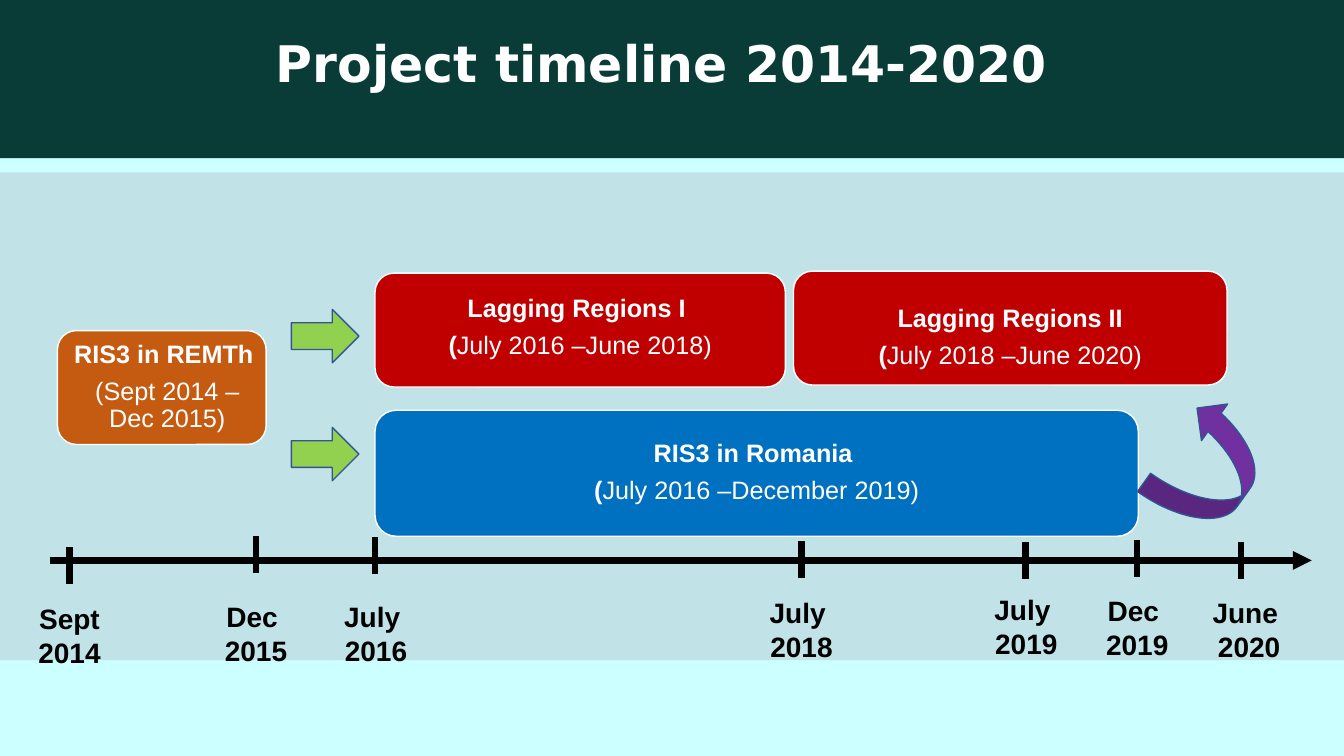
from dataclasses import dataclass

from lxml.etree import SubElement
from pptx import Presentation
from pptx.dml.color import RGBColor
from pptx.enum.shapes import MSO_CONNECTOR, MSO_SHAPE as Shape
from pptx.enum.text import MSO_ANCHOR as Anchor, MSO_AUTO_SIZE, PP_ALIGN as Align
from pptx.oxml.ns import qn
from pptx.util import Inches, Pt

WHITE, BLACK, OUTLINE = "FFFFFF", "000000", "325491"
SLIDE_W, SLIDE_H = 13.33, 7.5
AXIS_Y = 5.56
TICK_H = 0.36
LABEL_W, LABEL_H = 1.36, 0.77


@dataclass
class Project:
    name: str
    opening: str
    dates: str
    box: tuple[float, float, float, float]
    fill: str
    insets: tuple[float, float, float, float] = (0.07, 0.07, 0.07, 0.07)


@dataclass
class Milestone:
    month: str
    year: str
    x: float
    tick_top: float
    label_top: float
    label_shift: float = 0


PROJECTS = [
    Project("RIS3 in REMTh ", "", "(Sept 2014 –Dec 2015)",
            (0.57, 3.28, 2.07, 1.13), "C55A11", (0.11, 0.07, 0, 0.07)),
    Project("Lagging Regions I ", "(", "July 2016 –June 2018)",
            (3.72, 2.71, 4.07, 1.13), "C00000", (0.07, 0.07, 0.07, 0.12)),
    Project("Lagging Regions II", "(", "July 2018 –June 2020)",
            (7.87, 2.69, 4.3, 1.13), "C00000", (0.07, 0.26, 0.07, 0.07)),
    Project("RIS3 in Romania ", "(", "July 2016 –December 2019)",
            (3.72, 4.07, 7.57, 1.25), "0070C0"),
]

MILESTONES = [
    Milestone("Sept", "2014", 0.69, 5.43, 5.92),
    Milestone("Dec ", "2015", 2.54, 5.32, 5.9),
    Milestone("July ", "2016", 3.72, 5.33, 5.9, 0.01),
    Milestone("July ", "2018", 7.95, 5.37, 5.86),
    Milestone("July ", "2019", 10.17, 5.38, 5.83, 0.01),
    Milestone("Dec ", "2019", 11.28, 5.36, 5.84),
    Milestone("June ", "2020", 12.31, 5.38, 5.86, 0.08),
]


def color(hex_code: str) -> RGBColor:
    return RGBColor.from_string(hex_code)


def set_font(font, name: str, size: float, hex_code: str) -> None:
    font.name, font.size, font.bold = name, Pt(size), True
    font.color.rgb = color(hex_code)


def add_shape(s, kind: Shape, box: tuple, fill: str, outline: str | None = None):
    sp = s.shapes.add_shape(kind, *map(Inches, box))
    sp.shadow.inherit = False
    sp.fill.solid()
    sp.fill.fore_color.rgb = color(fill)
    if outline:
        sp.line.color.rgb = color(outline)
        sp.line.width = Pt(1)
    else:
        sp.line.fill.background()
    return sp


def add_line(s, x1: float, y1: float, x2: float, y2: float, arrow: bool = False) -> None:
    line = s.shapes.add_connector(MSO_CONNECTOR.STRAIGHT, *map(Inches, (x1, y1, x2, y2)))
    line.line.color.rgb = color(BLACK)
    line.line.width = Pt(4.5)
    if arrow:
        SubElement(line.line._get_or_add_ln(), qn("a:tailEnd"), type="triangle")
    SubElement(line.element.spPr, qn("a:effectLst"))


def add_title(s, text: str):
    title = s.shapes.title
    title.left, title.top, title.width, title.height = map(Inches, (0.6, 0.34, 11.92, 1.09))
    tf = title.text_frame
    tf.text = text
    tf.auto_size = MSO_AUTO_SIZE.NONE
    tf.vertical_anchor = Anchor.TOP
    p = tf.paragraphs[0]
    p.alignment, p.line_spacing = Align.CENTER, 0.9
    set_font(p.font, "DejaVu Sans", 36, WHITE)
    return title


def add_project(s, project: Project) -> None:
    sp = add_shape(s, Shape.ROUNDED_RECTANGLE, project.box, project.fill, WHITE)
    tf = sp.text_frame
    tf.word_wrap, tf.vertical_anchor = True, Anchor.MIDDLE
    tf.margin_left, tf.margin_top, tf.margin_right, tf.margin_bottom = map(Inches, project.insets)
    name, dates = tf.paragraphs[0], tf.add_paragraph()
    for p in (name, dates):
        p.alignment, p.line_spacing, p.space_after = Align.CENTER, 0.9, Pt(7)
        set_font(p.font, "Arial", 18, WHITE)
    name.add_run().text = project.name
    if project.opening:
        dates.add_run().text = project.opening
    r = dates.add_run()
    r.text, r.font.bold = project.dates, False


def add_milestone(s, m: Milestone) -> None:
    add_line(s, m.x, m.tick_top, m.x, m.tick_top + TICK_H)
    left = m.x + m.label_shift - LABEL_W / 2
    label = s.shapes.add_textbox(*map(Inches, (left, m.label_top, LABEL_W, LABEL_H)))
    tf = label.text_frame
    tf.word_wrap = True
    for p, text in zip((tf.paragraphs[0], tf.add_paragraph()), (m.month, m.year)):
        p.text, p.alignment = text, Align.CENTER
        set_font(p.font, "Arial", 20, BLACK)


def main() -> None:
    prs = Presentation()
    prs.slide_width, prs.slide_height = Inches(SLIDE_W), Inches(SLIDE_H)
    s = prs.slides.add_slide(prs.slide_layouts[5])
    s.background.fill.solid()
    s.background.fill.fore_color.rgb = color("CCFFFF")

    title = add_title(s, "Project timeline 2014-2020")
    for top, height, fill in ((1.71, 4.84, "C1E3E8"), (0, 1.57, "093B37")):
        band = add_shape(s, Shape.RECTANGLE, (0, top, SLIDE_W, height), fill)
        title.element.addprevious(band.element)  # keep the bands behind the title

    for project in PROJECTS:
        add_project(s, project)

    add_line(s, 0.5, AXIS_Y, 13.01, AXIS_Y, arrow=True)
    for milestone in MILESTONES:
        add_milestone(s, milestone)

    for top in (3.07, 4.24):
        add_shape(s, Shape.RIGHT_ARROW, (2.89, top, 0.67, 0.53), "92D050", OUTLINE)
    loop = add_shape(s, Shape.CURVED_RIGHT_ARROW, (11.56, 4.01, 0.89, 1.24), "7030A0", OUTLINE)
    loop.rotation = 215.5

    prs.save("out.pptx")


if __name__ == "__main__":
    main()
